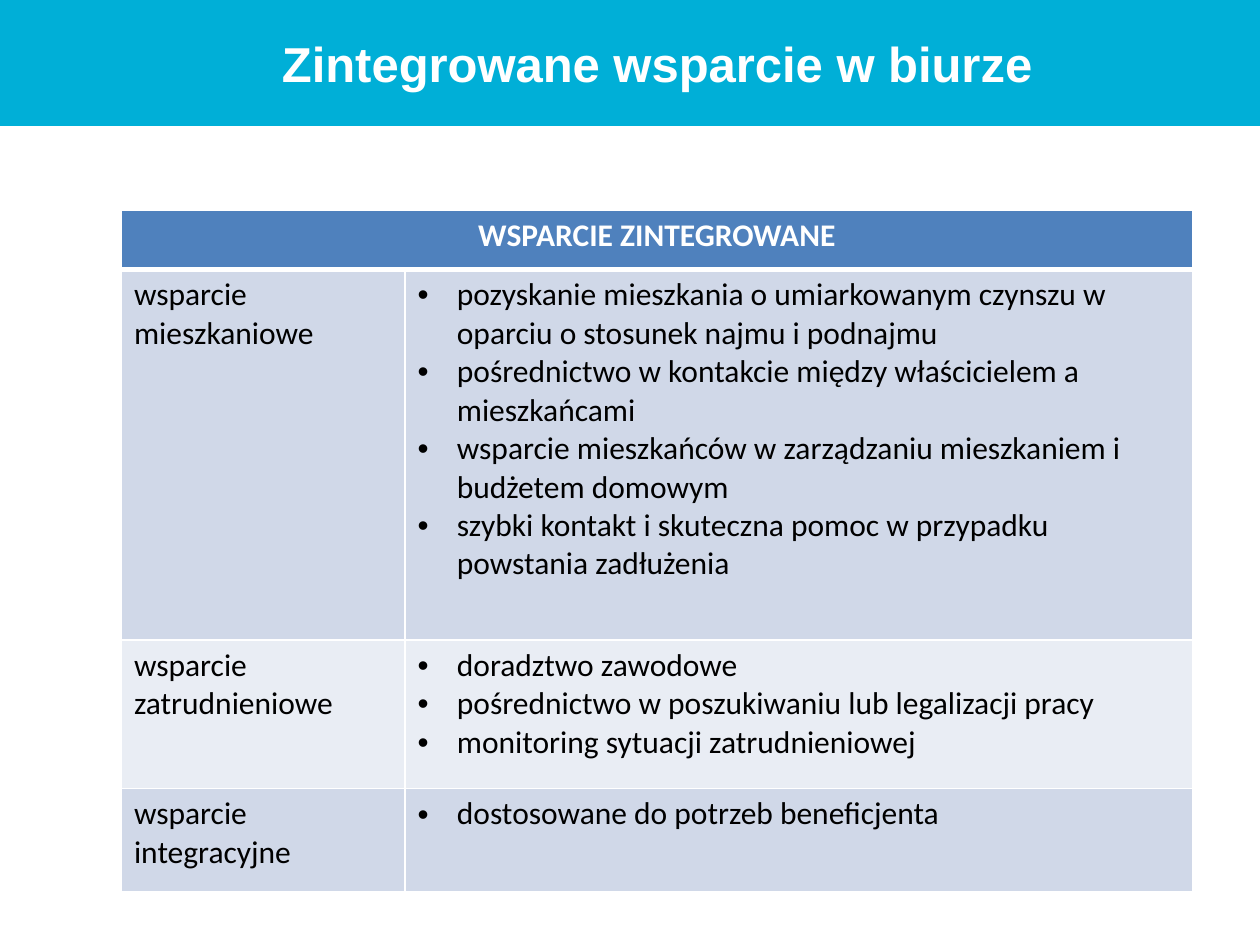
from lxml.etree import SubElement
from pptx import Presentation
from pptx.dml.color import RGBColor
from pptx.enum.shapes import MSO_SHAPE
from pptx.enum.text import MSO_ANCHOR, MSO_AUTO_SIZE, PP_ALIGN
from pptx.oxml.ns import qn
from pptx.util import Pt

COLOURS = {
    "band": "00AFD7", "white": "FFFFFF", "black": "000000",
    "header": "4F81BD", "odd": "D0D8E8", "even": "E9EDF4",
}
HEADING = "WSPARCIE ZINTEGROWANE"
SUPPORT = [
    ("wsparcie mieszkaniowe", [
        "pozyskanie mieszkania o umiarkowanym czynszu w oparciu o stosunek najmu i podnajmu",
        "pośrednictwo w kontakcie między właścicielem a mieszkańcami",
        "wsparcie mieszkańców w zarządzaniu mieszkaniem i budżetem domowym",
        "szybki kontakt i skuteczna pomoc w przypadku powstania zadłużenia",
    ]),
    ("wsparcie zatrudnieniowe", [
        "doradztwo zawodowe",
        "pośrednictwo w poszukiwaniu lub legalizacji pracy",
        "monitoring sytuacji zatrudnieniowej",
    ]),
    ("wsparcie integracyjne", ["dostosowane do potrzeb beneficjenta"]),
]
COLUMN_WIDTHS = [162, 450]
ROW_HEIGHTS = [33.84, 211.68, 84.96, 59.04]


def colour(name):
    """Return the named colour."""
    return RGBColor.from_string(COLOURS[name])


def write(paragraph, text, font="Calibri", size=18, color="black", bold=False,
          align=PP_ALIGN.LEFT):
    """Put one formatted run in a paragraph."""
    paragraph.alignment = align
    run = paragraph.add_run()
    run.text = text
    run.font.name, run.font.size, run.font.bold = font, Pt(size), bold
    run.font.color.rgb = colour(color)


def add_bullet(paragraph, indent=22.5):
    """Give a paragraph a hanging round bullet."""
    properties = paragraph._p.get_or_add_pPr()
    properties.set("marL", str(Pt(indent)))
    properties.set("indent", str(-Pt(indent)))
    SubElement(properties, qn("a:buFont"), typeface="Arial")
    SubElement(properties, qn("a:buChar"), char="•")


def style_cell(cell, fill, top=1, bottom=1):
    """Set the white borders and the fill of a cell."""
    properties = cell._tc.get_or_add_tcPr()
    for side, width in (("L", 1), ("R", 1), ("T", top), ("B", bottom)):
        line = SubElement(properties, qn(f"a:ln{side}"), w=str(Pt(width)))
        solid = SubElement(line, qn("a:solidFill"))
        SubElement(solid, qn("a:srgbClr"), val=COLOURS["white"])
    cell.fill.solid()
    cell.fill.fore_color.rgb = colour(fill)


def add_title(slide, text):
    """Place the title over a full-width band."""
    title = slide.shapes.title
    title.left, title.top, title.width, title.height = Pt(31), Pt(15.3), Pt(689), Pt(75.6)
    frame = title.text_frame
    frame.word_wrap = True
    frame.auto_size = MSO_AUTO_SIZE.NONE
    frame.vertical_anchor = MSO_ANCHOR.TOP
    write(frame.paragraphs[0], text, font="Arial", size=28, color="white", bold=True,
          align=PP_ALIGN.CENTER)
    band = slide.shapes.add_shape(MSO_SHAPE.RECTANGLE, 0, 0, Pt(720), Pt(72))
    band.shadow.inherit = False
    band.fill.solid()
    band.fill.fore_color.rgb = colour("band")
    band.line.fill.background()
    title.element.addprevious(band.element)


def add_support_table(slide):
    """Add the table of support kinds and their bulleted details."""
    table = slide.shapes.add_table(
        len(ROW_HEIGHTS), len(COLUMN_WIDTHS), Pt(69.4), Pt(120.2),
        Pt(sum(COLUMN_WIDTHS)), Pt(sum(ROW_HEIGHTS))).table
    for column, width in zip(table.columns, COLUMN_WIDTHS):
        column.width = Pt(width)
    for row, height in zip(table.rows, ROW_HEIGHTS):
        row.height = Pt(height)
    for cell in table.rows[0].cells:
        style_cell(cell, "header", bottom=3)
    table.cell(0, 0).merge(table.cell(0, 1))
    write(table.cell(0, 0).text_frame.paragraphs[0], HEADING, color="white", bold=True,
          align=PP_ALIGN.CENTER)
    for index, (kind, details) in enumerate(SUPPORT, start=1):
        label, content = table.rows[index].cells
        for cell in (label, content):
            style_cell(cell, "odd" if index % 2 else "even", top=3 if index == 1 else 1)
        write(label.text_frame.paragraphs[0], kind)
        frame = content.text_frame
        for position, detail in enumerate(details):
            paragraph = frame.add_paragraph() if position else frame.paragraphs[0]
            write(paragraph, detail)
            add_bullet(paragraph)


def main():
    """Build and save the slide."""
    presentation = Presentation()
    presentation.slide_width, presentation.slide_height = Pt(720), Pt(540)
    slide = presentation.slides.add_slide(presentation.slide_layouts[5])
    add_title(slide, "Zintegrowane wsparcie w biurze")
    add_support_table(slide)
    presentation.save("out.pptx")


main()
